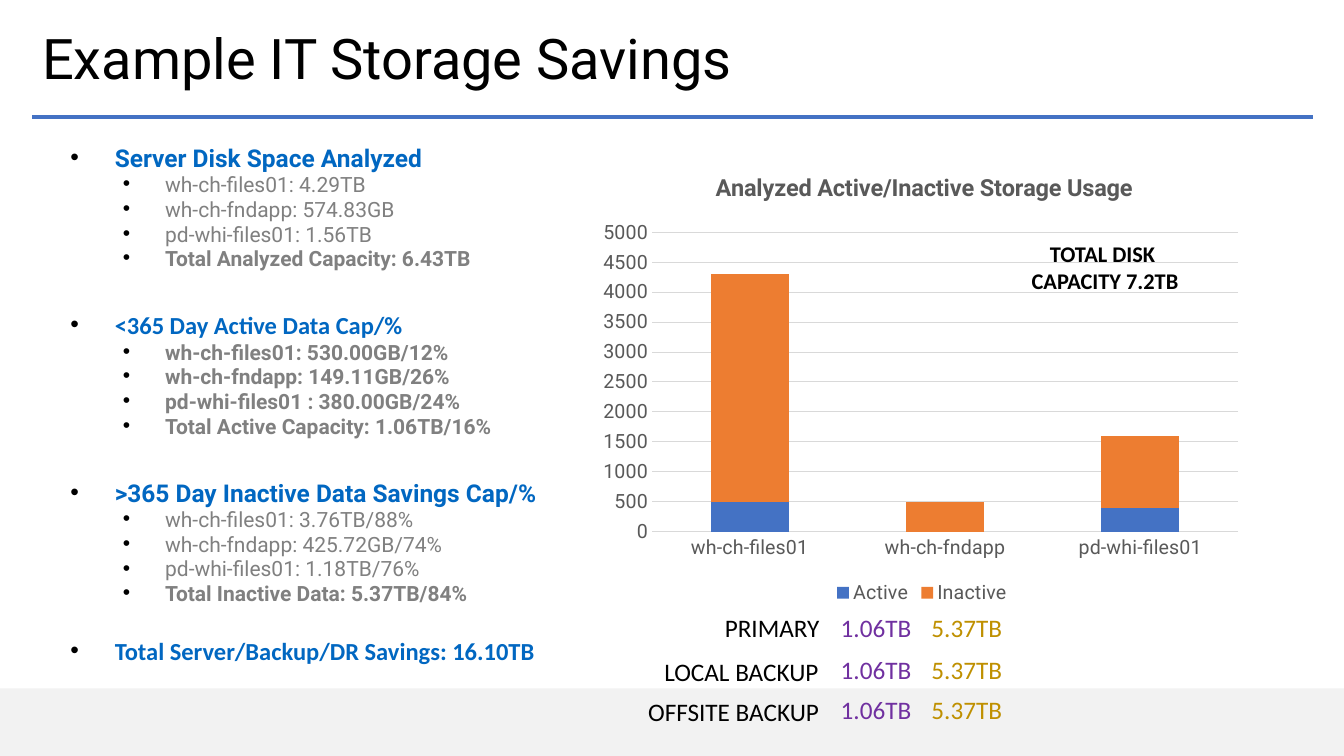
from dataclasses import dataclass

from lxml.etree import SubElement, fromstring
from pptx import Presentation
from pptx.chart.data import CategoryChartData
from pptx.dml.color import RGBColor
from pptx.enum.chart import XL_CHART_TYPE, XL_LEGEND_POSITION, XL_TICK_MARK
from pptx.enum.shapes import MSO_CONNECTOR, MSO_SHAPE
from pptx.enum.text import MSO_ANCHOR, PP_ALIGN
from pptx.oxml.ns import nsdecls, qn
from pptx.util import Inches, Pt

BLUE, ORANGE, HEADING, GRAY = "4472C4", "ED7D31", "0167C1", "808080"
AXIS_GRAY, BLACK, PURPLE, GOLD = "595959", "000000", "7030A0", "BF9000"


@dataclass
class Section:
    heading: str
    items: list[str]
    heading_font: str = "Roboto"
    all_bold: bool = False  # otherwise only the closing total is bold
    space_before: float = 34.5


@dataclass
class BackupRow:
    label: str
    label_width: float
    label_top: float
    value_top: float


SECTIONS = [
    Section("Server Disk Space Analyzed",
            ["wh-ch-files01: 4.29TB", "wh-ch-fndapp: 574.83GB",
             "pd-whi-files01: 1.56TB", "Total Analyzed Capacity: 6.43TB"],
            space_before=0),
    Section("<365 Day Active Data Cap/%",
            ["wh-ch-files01: 530.00GB/12%", "wh-ch-fndapp: 149.11GB/26%",
             "pd-whi-files01 : 380.00GB/24%", "Total Active Capacity: 1.06TB/16%"],
            heading_font="Calibri", all_bold=True),
    Section(">365 Day Inactive Data Savings Cap/%",
            ["wh-ch-files01: 3.76TB/88%", "wh-ch-fndapp: 425.72GB/74%",
             "pd-whi-files01: 1.18TB/76%", "Total Inactive Data: 5.37TB/84%"]),
    Section("Total Server/Backup/DR Savings: 16.10TB", [],
            heading_font="Calibri", space_before=28),
]
BACKUP_ROWS = [
    BackupRow("PRIMARY", 1.15, 6.03, 6.03),
    BackupRow("LOCAL BACKUP", 1.75, 6.46, 6.44),
    BackupRow("OFFSITE BACKUP", 1.91, 6.86, 6.84),
]
VALUES_LEFT = 8.24


def color(value: str) -> RGBColor:
    return RGBColor.from_string(value)


def style_font(font, name: str, size: float, hex_color: str, bold: bool = False) -> None:
    font.name, font.size, font.bold = name, Pt(size), bold
    font.color.rgb = color(hex_color)


def add_run(paragraph, text: str, name: str, size: float, hex_color: str,
            bold: bool = False) -> None:
    run = paragraph.add_run()
    run.text = text
    style_font(run.font, name, size, hex_color, bold)


def add_label(slide, left: float, top: float, width: float, height: float,
              lines: list[str], size: float, hex_color: str, name: str = "Calibri",
              bold: bool = False, align=PP_ALIGN.LEFT, wrap: bool = False):
    shape = slide.shapes.add_textbox(Inches(left), Inches(top), Inches(width), Inches(height))
    frame = shape.text_frame
    frame.word_wrap = wrap
    for index, line in enumerate(lines):
        paragraph = frame.add_paragraph() if index else frame.paragraphs[0]
        paragraph.alignment = align
        add_run(paragraph, line, name, size, hex_color, bold)
    return shape


def format_bullet(paragraph, level: int, margin: float, hanging: float,
                  space_before: float) -> None:
    properties = paragraph._p.get_or_add_pPr()
    properties.set("marL", str(Inches(margin)))
    properties.set("indent", str(-Inches(hanging)))
    bullet_color = SubElement(properties, qn("a:buClr"))
    SubElement(bullet_color, qn("a:srgbClr")).set("val", BLACK)
    SubElement(properties, qn("a:buFont")).set("typeface", "Arial")
    SubElement(properties, qn("a:buChar")).set("char", "•")
    paragraph.level = level
    paragraph.line_spacing = 0.7
    paragraph.space_before = Pt(space_before)


def add_sections(slide) -> None:
    shape = slide.shapes.add_textbox(Inches(0.54), Inches(1.45), Inches(11.66), Inches(4.51))
    frame = shape.text_frame
    frame.word_wrap = True
    for index, section in enumerate(SECTIONS):
        heading = frame.add_paragraph() if index else frame.paragraphs[0]
        format_bullet(heading, 0, 0.5, 0.44, section.space_before)
        add_run(heading, section.heading, section.heading_font, 17.5, HEADING, True)
        for item in section.items:
            paragraph = frame.add_paragraph()
            format_bullet(paragraph, 1, 1, 0.42, 5)
            bold = section.all_bold or item == section.items[-1]
            add_run(paragraph, item, "Roboto", 15, GRAY, bold)


def manual_layout(x: float, y: float, width: float = 0, height: float = 0):
    size = f'<c:w val="{width}"/><c:h val="{height}"/>' if width else ""
    target = '<c:layoutTarget val="inner"/>' if width else ""
    return fromstring(
        f'<c:layout {nsdecls("c")}><c:manualLayout>{target}<c:xMode val="edge"/>'
        f'<c:yMode val="edge"/><c:x val="{x}"/><c:y val="{y}"/>{size}'
        '</c:manualLayout></c:layout>')


def add_usage_chart(slide) -> None:
    data = CategoryChartData()
    data.categories = ["wh-ch-files01", "wh-ch-fndapp", "pd-whi-files01"]
    data.add_series("Active", (500, 0, 400))
    data.add_series("Inactive", (3800, 500, 1200))
    chart = slide.shapes.add_chart(XL_CHART_TYPE.COLUMN_STACKED, Inches(5.88), Inches(1.54),
                                   Inches(6.53), Inches(4.5), data).chart
    style_font(chart.font, "Roboto", 14, BLACK)

    # Title, legend and plot area
    chart.has_title = True
    add_run(chart.chart_title.text_frame.paragraphs[0],
            "Analyzed Active/Inactive Storage Usage", "Roboto", 16.8, AXIS_GRAY, True)
    chart.has_legend = True
    chart.legend.position = XL_LEGEND_POSITION.BOTTOM
    chart.legend.include_in_layout = False
    style_font(chart.legend.font, "Roboto", 14, AXIS_GRAY)
    title = chart.chart_title._element
    for old_layout in title.findall(qn("c:layout")):
        title.remove(old_layout)
    title.find(qn("c:tx")).addnext(manual_layout(0.18, 0.03))
    plot_area = chart._chartSpace.chart.plotArea
    for old_layout in plot_area.findall(qn("c:layout")):
        plot_area.remove(old_layout)
    plot_area.insert(0, manual_layout(0.09, 0.17, 0.89, 0.66))

    # Axes
    for axis in (chart.category_axis, chart.value_axis):
        axis.major_tick_mark = axis.minor_tick_mark = XL_TICK_MARK.NONE
        axis.format.line.fill.background()
        style_font(axis.tick_labels.font, "Roboto", 14, AXIS_GRAY)
    value_axis = chart.value_axis
    value_axis.minimum_scale, value_axis.maximum_scale = 0, 5000
    value_axis.major_unit = 500
    value_axis.major_gridlines.format.line.color.rgb = color("D9D9D9")
    value_axis.major_gridlines.format.line.width = Pt(0.75)

    # Columns
    plot = chart.plots[0]
    plot.gap_width, plot.overlap, plot.vary_by_categories = 150, 100, False
    for series, fill in zip(plot.series, (BLUE, ORANGE)):
        series.format.fill.solid()
        series.format.fill.fore_color.rgb = color(fill)


def main() -> None:
    presentation = Presentation()
    presentation.slide_width, presentation.slide_height = Inches(13.33), Inches(7.5)
    slide = presentation.slides.add_slide(presentation.slide_layouts[6])

    # Footer band and title rule
    band = slide.shapes.add_shape(MSO_SHAPE.RECTANGLE, 0, Inches(6.83),
                                  Inches(13.33), Inches(0.67))
    band.shadow.inherit = False
    band.fill.solid()
    band.fill.fore_color.rgb = color("F2F2F2")
    band.line.fill.background()
    rule = slide.shapes.add_connector(MSO_CONNECTOR.STRAIGHT, Inches(0.32), Inches(1.16),
                                      Inches(13.02), Inches(1.16))
    rule.line.color.rgb = color(BLUE)
    rule.line.width = Pt(2.75)
    SubElement(rule._element.spPr, qn("a:effectLst"))

    # Title, bullets and chart
    title = add_label(slide, 0.32, 0.14, 12.7, 0.93, ["Example IT Storage Savings"],
                      40, BLACK, name="Roboto", wrap=True)
    title.text_frame.vertical_anchor = MSO_ANCHOR.MIDDLE
    title.text_frame.paragraphs[0].line_spacing = 0.9
    add_sections(slide)
    add_usage_chart(slide)

    # Savings per backup tier and capacity note
    for row in BACKUP_ROWS:
        add_label(slide, VALUES_LEFT, row.value_top, 0.91, 0.4, ["1.06TB"], 18, PURPLE)
        add_label(slide, VALUES_LEFT + 0.9, row.value_top, 0.91, 0.4, ["5.37TB"], 18, GOLD)
        add_label(slide, VALUES_LEFT - row.label_width, row.label_top, row.label_width, 0.4,
                  [row.label], 18, BLACK)
    add_label(slide, 10.12, 2.33, 1.68, 0.64, ["TOTAL DISK ", "CAPACITY 7.2TB"], 16, BLACK,
              bold=True, align=PP_ALIGN.CENTER)

    presentation.save("out.pptx")


if __name__ == "__main__":
    main()
